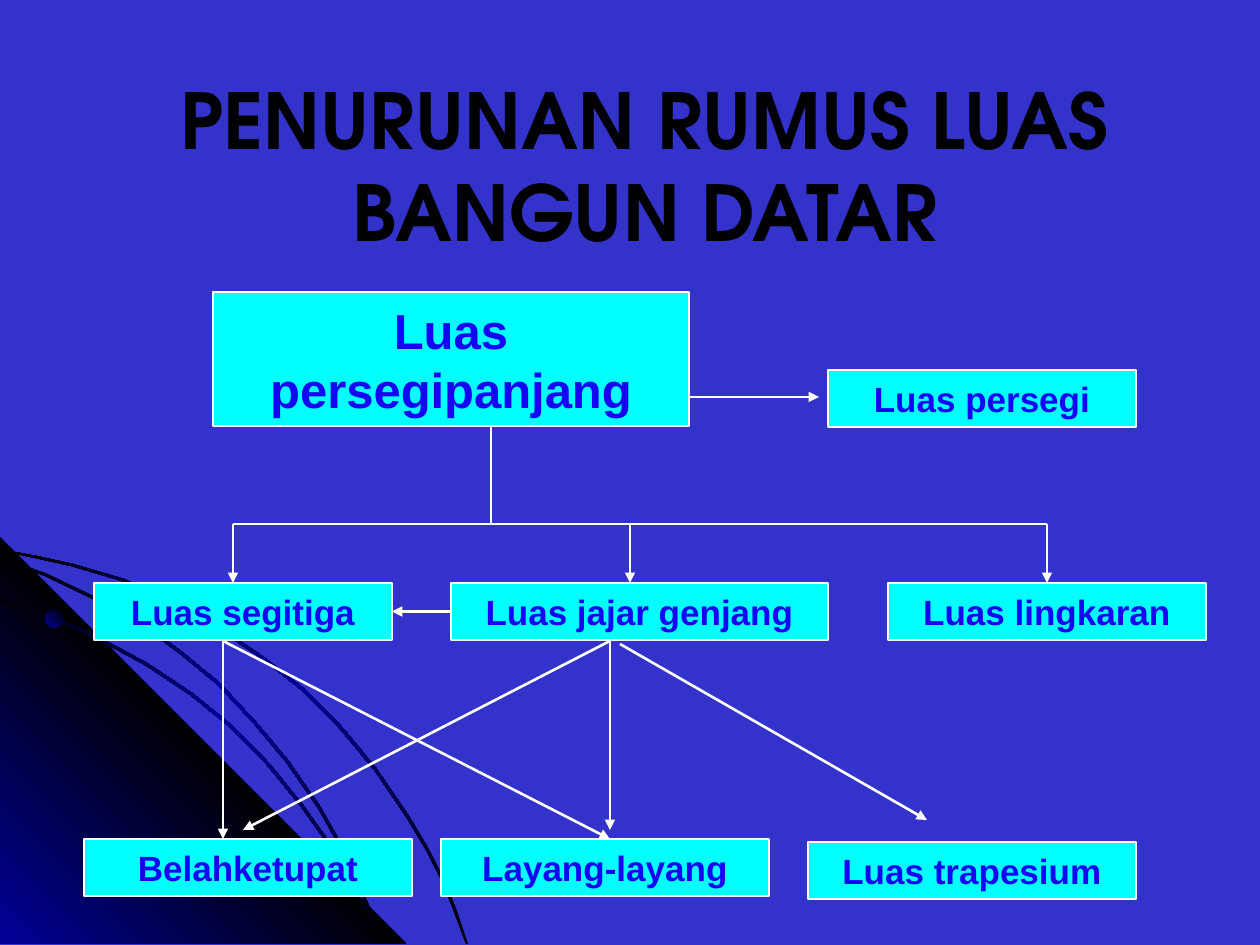
from copy import deepcopy
from lxml.etree import SubElement
from pptx import Presentation
from pptx.dml.color import RGBColor
from pptx.enum.shapes import MSO_CONNECTOR as Link, MSO_SHAPE as Kind
from pptx.enum.text import MSO_ANCHOR as Anchor, MSO_AUTO_SIZE as Fit, PP_ALIGN as Align
from pptx.oxml.ns import qn
from pptx.util import Inches, Pt

UNIT = Inches(1) / 126
EDGE = 944


def px(*nums):
    return [round(n * UNIT) for n in nums]


def paint(text):
    return RGBColor.from_string(text)


def write(frame, text, size=20, face="Arial", color="1605F3", bold=True):
    frame.word_wrap = True
    frame.auto_size = Fit.NONE
    frame.vertical_anchor = Anchor.MIDDLE
    para = frame.paragraphs[0]
    para.alignment = Align.CENTER
    run = para.add_run()
    run.text = text
    font = run.font
    font.size, font.name, font.bold = Pt(size), face, bold
    font.color.rgb = paint(color)


def blend(fill, root, colors, angle):
    fill.gradient()
    fill.gradient_angle = angle
    stops = root.xpath(".//a:gsLst")[0]
    for _ in colors[2:]:
        stops.append(deepcopy(stops[-1]))
    for i, (stop, color) in enumerate(zip(fill.gradient_stops, colors)):
        stop.color.rgb = paint(color)
        stop.position = i / (len(colors) - 1)


class Board:
    fill = "00FFFF"
    ink = "FFFFFF"
    width = Pt(1.5)
    dark = "000000"
    glow = "010199"

    def __init__(self, deck):
        self.slide = deck.slides.add_slide(deck.slide_layouts[5])
        self.shapes = self.slide.shapes
        blend(self.slide.background.fill, self.slide._element, ["3333CC", "3232CA"], 270)

    def title(self, text, x, y, w, h):
        head = self.shapes.title
        head.left, head.top, head.width, head.height = px(x, y, w, h)
        write(head.text_frame, text, size=44, face="TeX Gyre Adventor", color=self.dark)

    def shade(self, shape, colors, angle):
        shape.shadow.inherit = False
        shape.line.fill.background()
        blend(shape.fill, shape._element, colors, angle)

    def patch(self, points, colors, angle):
        pen = self.shapes.build_freeform(*points[0], scale=UNIT)
        pen.add_line_segments(points[1:], close=True)
        self.shade(pen.convert_to_shape(), colors, angle)

    def arc(self, points):
        rim = [(x + 2 * (x > 0), y - 2 * (y < EDGE)) for x, y in reversed(points)]
        self.patch(points + rim, [self.dark, self.glow, self.dark], 135)

    def dot(self, x, y, size):
        shape = self.shapes.add_shape(Kind.OVAL, *px(x, y, size, size))
        self.shade(shape, [self.dark, self.glow], 225)

    def box(self, text, x, y, w, h=57, **style):
        shape = self.shapes.add_shape(Kind.RECTANGLE, *px(x, y, w, h))
        shape.shadow.inherit = False
        shape.fill.solid()
        shape.fill.fore_color.rgb = paint(self.fill)
        shape.line.color.rgb = paint(self.ink)
        shape.line.width = self.width
        write(shape.text_frame, text, **style)
        return shape

    def line(self, x1, y1, x2, y2, arrow=True, start=None, end=None):
        link = self.shapes.add_connector(Link.STRAIGHT, *px(x1, y1, x2, y2))
        link.line.color.rgb = paint(self.ink)
        link.line.width = self.width
        props = link._element.spPr
        if arrow:
            SubElement(props.find(qn("a:ln")), qn("a:tailEnd"), type="triangle")
        SubElement(props, qn("a:effectLst"))
        if start:
            link.begin_connect(*start)
        if end:
            link.end_connect(*end)


def main():
    deck = Presentation()
    deck.slide_width, deck.slide_height = Inches(10), Inches(7.5)
    board = Board(deck)

    board.arc([(0, 551), (35, 558), (71, 566), (122, 581), (170, 602), (218, 629),
               (262, 659), (304, 692), (341, 730), (375, 771), (407, 818),
               (425, 848), (441, 879), (454, 911), (466, EDGE)])
    board.patch([(0, 538), (406, EDGE), (0, EDGE)],
                [board.glow, board.dark, board.glow], 225)
    board.arc([(0, 601), (49, 617), (97, 639), (145, 665), (189, 694), (231, 728),
               (268, 766), (302, 808), (334, 853), (359, 900), (370, 922), (379, EDGE)])
    board.arc([(0, 559), (45, 576), (93, 599), (137, 622), (179, 653), (218, 685),
               (255, 725), (286, 762), (318, 808), (336, 840), (353, 874),
               (368, 910), (379, EDGE)])
    board.dot(45, 609, 19)

    board.title("PENURUNAN RUMUS LUAS BANGUN DATAR", 74, 66, 1142, 198)
    board.box("Luas persegipanjang", 213, 292, 476, 134, size=28)
    board.box("Luas persegi", 828, 370, 308)
    left = board.box("Luas segitiga", 94, 583, 298)
    mid = board.box("Luas jajar genjang", 451, 583, 377)
    right = board.box("Luas lingkaran", 888, 583, 318)
    board.box("Belahketupat", 84, 839, 328)
    board.box("Layang-layang", 441, 839, 328)
    board.box("Luas trapesium", 808, 842, 328)

    board.line(690, 397, 819, 397)
    board.line(233, 524, 1047, 524, arrow=False)
    board.line(491, 425, 491, 524, arrow=False)
    for x, end in ((233, None), (630, None), (1047, (right, 0))):
        board.line(x, 524, x, 583, end=end)
    board.line(451, 612, 392, 612, start=(mid, 1), end=(left, 3))
    board.line(620, 644, 927, 820)
    for x, ends in ((223, [(610, 839), (223, 839)]), (610, [(243, 830), (610, 830)])):
        for end in ends:
            board.line(x, 641, *end)

    deck.save("out.pptx")


if __name__ == "__main__":
    main()
